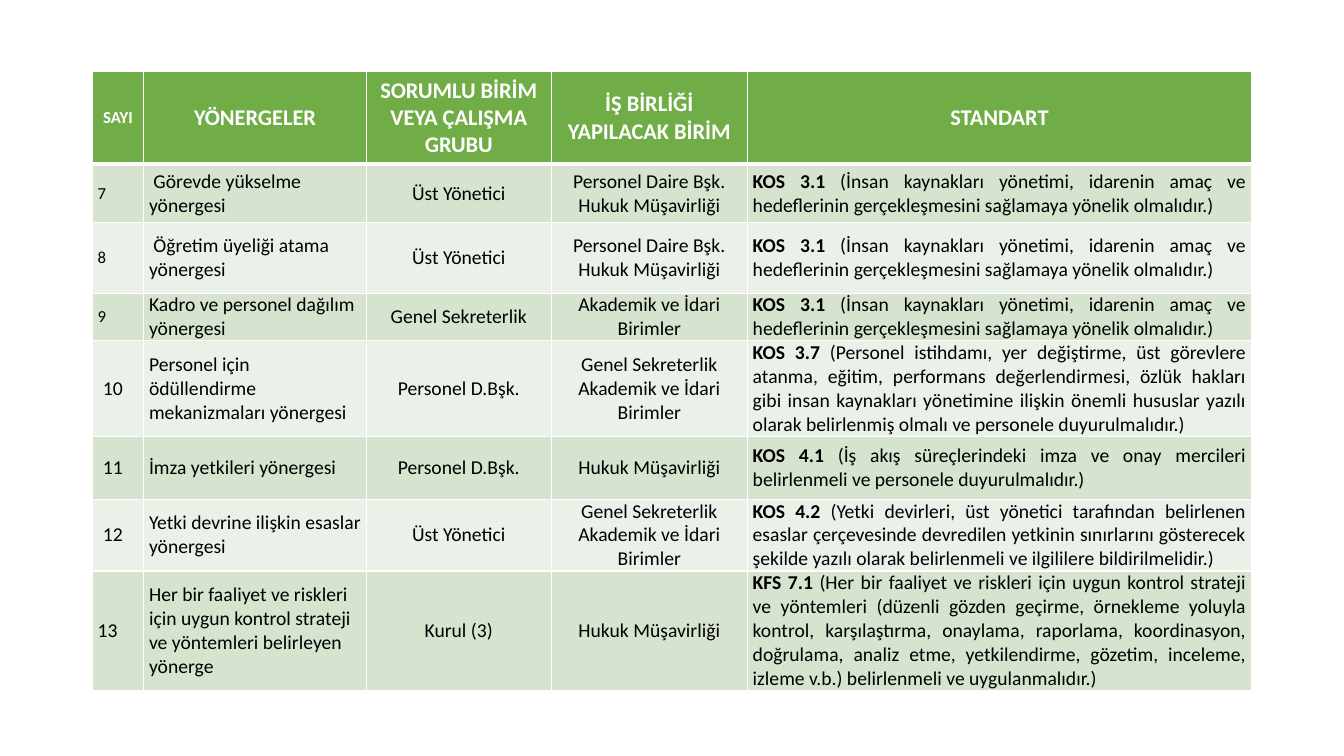
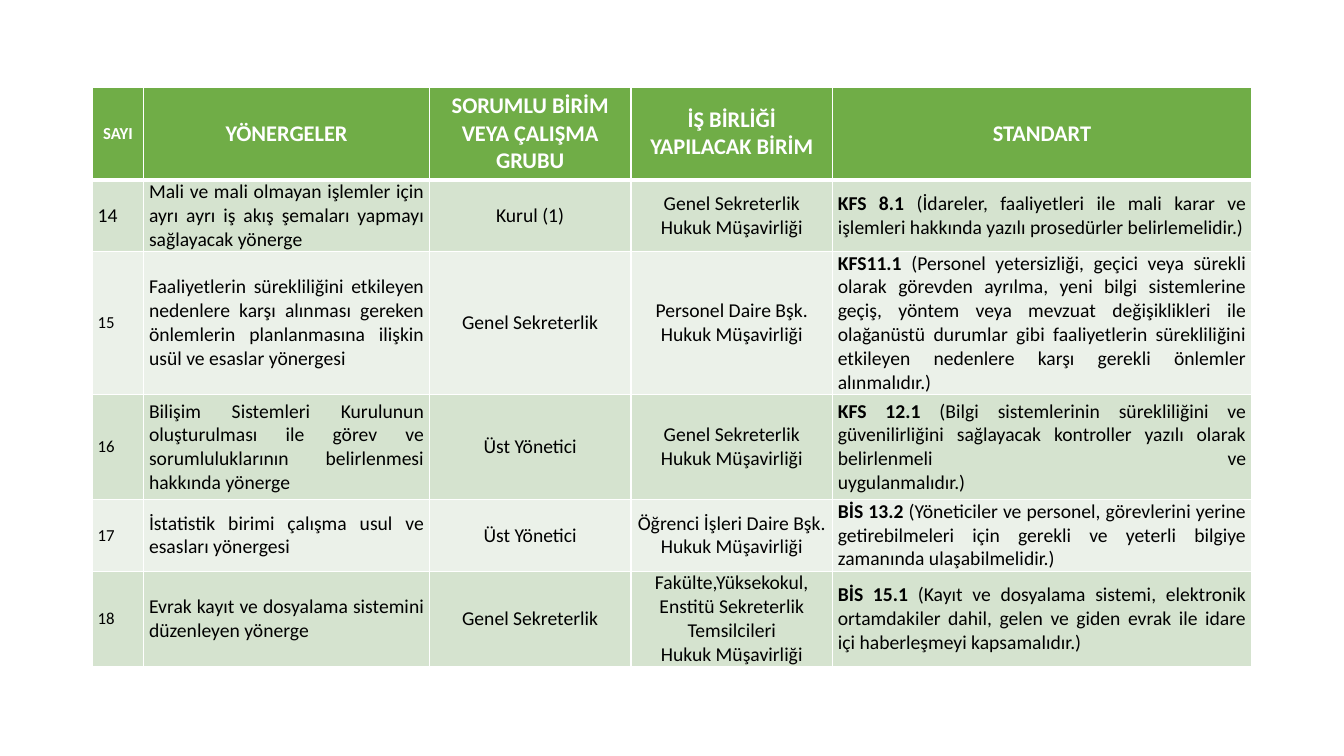
import pptx
import pptx.util
import pptx.dml.color
import pptx.enum.text
import pptx.oxml
import pptx.oxml.ns

RGBColor = pptx.dml.color.RGBColor
ALIGN = pptx.enum.text.PP_ALIGN

WHITE = RGBColor(0xFF, 0xFF, 0xFF)
BLACK = RGBColor(0x00, 0x00, 0x00)
GREEN = RGBColor(0x70, 0xAD, 0x47)
BANDS = (RGBColor(0xD5, 0xE3, 0xCF), RGBColor(0xEB, 0xF1, 0xE9))

PX = 9525  # EMU per px, 96 px to the inch
LEFT = 88
HEADER_HEIGHT = 88
NARROW, WIDE = 5, 10  # side insets of a cell

HEADERS = ("SAYI", "YÖNERGELER", "SORUMLU BİRİM VEYA ÇALIŞMA GRUBU",
           "İŞ BİRLİĞİ YAPILACAK BİRİM", "STANDART")
UST = "Üst Yönetici"
GENEL = "Genel Sekreterlik"
PERSONEL = "Personel D.Bşk."
HUKUK = "Hukuk Müşavirliği"
BIRIMLER = "Akademik ve İdari Birimler"
DAIRE_HUKUK = "Personel Daire Bşk.\n" + HUKUK
GENEL_HUKUK = GENEL + "\n" + HUKUK
GENEL_BIRIMLER = GENEL + "\n" + BIRIMLER
KOS_31 = ("KOS 3.1 (İnsan kaynakları yönetimi, idarenin amaç ve hedeflerinin "
          "gerçekleşmesini sağlamaya yönelik olmalıdır.)")

# Row: height, number, number size, number inset, directive, unit, partners, standard
PERSONNEL_ROWS = [
    (56, "7", 12, NARROW, " Görevde yükselme yönergesi", UST, DAIRE_HUKUK, KOS_31),
    (67, "8", 12, NARROW, " Öğretim üyeliği atama yönergesi", UST, DAIRE_HUKUK, KOS_31),
    (45, "9", 12, NARROW, "Kadro ve personel dağılım yönergesi", GENEL, BIRIMLER, KOS_31),
    (91, "10", 14, WIDE, "Personel için ödüllendirme mekanizmaları yönergesi",
     PERSONEL, GENEL_BIRIMLER,
     "KOS 3.7 (Personel istihdamı, yer değiştirme, üst görevlere atanma, eğitim, "
     "performans değerlendirmesi, özlük hakları gibi insan kaynakları yönetimine "
     "ilişkin önemli hususlar yazılı olarak belirlenmiş olmalı ve personele "
     "duyurulmalıdır.)"),
    (60, "11", 14, WIDE, "İmza yetkileri yönergesi", PERSONEL, HUKUK,
     "KOS 4.1 (İş akış süreçlerindeki imza ve onay mercileri belirlenmeli ve "
     "personele duyurulmalıdır.)"),
    (68, "12", 14, WIDE, "Yetki devrine ilişkin esaslar yönergesi", UST, GENEL_BIRIMLER,
     "KOS 4.2 (Yetki devirleri, üst yönetici tarafından belirlenen esaslar "
     "çerçevesinde devredilen yetkinin sınırlarını gösterecek şekilde yazılı olarak "
     "belirlenmeli ve ilgililere bildirilmelidir.)"),
    (113, "13", 14, NARROW, "Her bir faaliyet ve riskleri için uygun kontrol strateji "
     "ve yöntemleri belirleyen yönerge", "Kurul (3)", HUKUK,
     "KFS 7.1 (Her bir faaliyet ve riskleri için uygun kontrol strateji ve yöntemleri "
     "(düzenli gözden geçirme, örnekleme yoluyla kontrol, karşılaştırma, onaylama, "
     "raporlama, koordinasyon, doğrulama, analiz etme, yetkilendirme, gözetim, "
     "inceleme, izleme v.b.) belirlenmeli ve uygulanmalıdır.)"),
]
OPERATION_ROWS = [
    (67, "14", 14, NARROW, "Mali ve mali olmayan işlemler için ayrı ayrı iş akış "
     "şemaları yapmayı sağlayacak yönerge", "Kurul (1)", GENEL_HUKUK,
     "KFS 8.1 (İdareler, faaliyetleri ile mali karar ve işlemleri hakkında yazılı "
     "prosedürler belirlemelidir.)"),
    (136, "15", 12, NARROW, "Faaliyetlerin sürekliliğini etkileyen nedenlere karşı "
     "alınması gereken önlemlerin planlanmasına ilişkin usül ve esaslar yönergesi",
     GENEL, DAIRE_HUKUK,
     "KFS11.1 (Personel yetersizliği, geçici veya sürekli olarak görevden ayrılma, "
     "yeni bilgi sistemlerine geçiş, yöntem veya mevzuat değişiklikleri ile "
     "olağanüstü durumlar gibi faaliyetlerin sürekliliğini etkileyen nedenlere karşı "
     "gerekli önlemler alınmalıdır.)"),
    (100, "16", 12, NARROW, "Bilişim Sistemleri Kurulunun oluşturulması ile görev ve "
     "sorumluluklarının belirlenmesi hakkında yönerge", UST, GENEL_HUKUK,
     "KFS 12.1 (Bilgi sistemlerinin sürekliliğini ve güvenilirliğini sağlayacak "
     "kontroller yazılı olarak belirlenmeli ve\vuygulanmalıdır.)"),
    (68, "17", 12, NARROW, "İstatistik birimi çalışma usul ve esasları yönergesi",
     UST, "Öğrenci İşleri Daire Bşk.\n" + HUKUK,
     "BİS 13.2 (Yöneticiler ve personel, görevlerini yerine getirebilmeleri için "
     "gerekli ve yeterli bilgiye zamanında ulaşabilmelidir.)"),
    (91, "18", 12, NARROW, "Evrak kayıt ve dosyalama sistemini düzenleyen yönerge",
     GENEL, "Fakülte,Yüksekokul,\nEnstitü Sekreterlik Temsilcileri\n" + HUKUK,
     "BİS 15.1 (Kayıt ve dosyalama sistemi, elektronik ortamdakiler dahil, gelen ve "
     "giden evrak ile idare içi haberleşmeyi kapsamalıdır.)"),
]


class Deck:
    def __init__(self):
        self.prs = pptx.Presentation()
        self.prs.slide_width = 1280 * PX
        self.prs.slide_height = 720 * PX
        self.s = None

    def slide(self):
        self.s = self.prs.slides.add_slide(self.prs.slide_layouts[6])

    def run(self, p, text, **fmt):
        """Add text to a paragraph, turning vertical tabs into line breaks."""
        for i, line in enumerate(text.split("\v")):
            if i:
                p.add_line_break()
            r = p.add_run()
            r.text = line
            r.font.color.rgb = fmt["color"]
            for name in ("size", "bold"):
                setattr(r.font, name, fmt[name])
            r.font.name = "Calibri"

    def borders(self, cell, top=1, bottom=1):
        tc_pr = cell._tc.get_or_add_tcPr()
        for side, width in (("L", 1), ("R", 1), ("T", top), ("B", bottom)):
            tc_pr.append(pptx.oxml.parse_xml(
                f'<a:ln{side} {pptx.oxml.ns.nsdecls("a")} w="{pptx.util.Pt(width)}">'
                f'<a:solidFill><a:srgbClr val="{WHITE}"/></a:solidFill></a:ln{side}>'))

    def cell(self, cell, text, fill, align, size=14, color=BLACK, bold=False,
             side=NARROW, edge=0, top=1, bottom=1, bold_code=False):
        """Fill one cell; bold_code sets the words before the first bracket bold."""
        self.borders(cell, top, bottom)
        cell.fill.solid()
        cell.fill.fore_color.rgb = fill
        layout = {"margin_left": side * PX, "margin_right": side * PX,
                  "margin_top": edge * PX, "margin_bottom": edge * PX,
                  "vertical_anchor": pptx.enum.text.MSO_ANCHOR.MIDDLE}
        for name, value in layout.items():
            setattr(cell, name, value)
        fmt = {"size": pptx.util.Pt(size), "color": color, "bold": bold}
        tf = cell.text_frame
        for i, line in enumerate(text.split("\n")):
            p = tf.add_paragraph() if i else tf.paragraphs[0]
            p.alignment = align
            if bold_code:
                code, bracket, line = line.partition(" (")
                self.run(p, code, **{**fmt, "bold": True})
                line = bracket + line
            self.run(p, line, **fmt)

    def table(self, top, widths, rows, directive_align):
        heights = [HEADER_HEIGHT] + [row[0] for row in rows]
        table = self.s.shapes.add_table(
            len(heights), len(widths), LEFT * PX, top * PX,
            sum(widths) * PX, sum(heights) * PX).table
        table.horz_banding = False
        for column, width in zip(table.columns, widths):
            column.width = width * PX
        for row, height in zip(table.rows, heights):
            row.height = height * PX

        for c, text in enumerate(HEADERS):
            self.cell(table.cell(0, c), text, GREEN, ALIGN.CENTER, size=16 if c else 12,
                      color=WHITE, bold=True, side=WIDE, edge=5, bottom=3)
        aligns = (ALIGN.JUSTIFY, directive_align, ALIGN.CENTER, ALIGN.CENTER, ALIGN.JUSTIFY)
        for i, (_, number, size, side, *texts) in enumerate(rows):
            for c, (text, align) in enumerate(zip((number, *texts), aligns)):
                fmt = {} if c else {"size": size, "side": side}
                self.cell(table.cell(i + 1, c), text, BANDS[i % 2], align,
                          top=1 if i else 3, bold_code=c == 4, **fmt)


def main():
    deck = Deck()
    deck.slide()
    deck.table(68, (49, 212, 176, 187, 480), PERSONNEL_ROWS, ALIGN.LEFT)
    deck.slide()
    deck.table(83, (49, 272, 192, 192, 399), OPERATION_ROWS, ALIGN.JUSTIFY)
    deck.prs.save("out.pptx")


if __name__ == "__main__":
    main()
